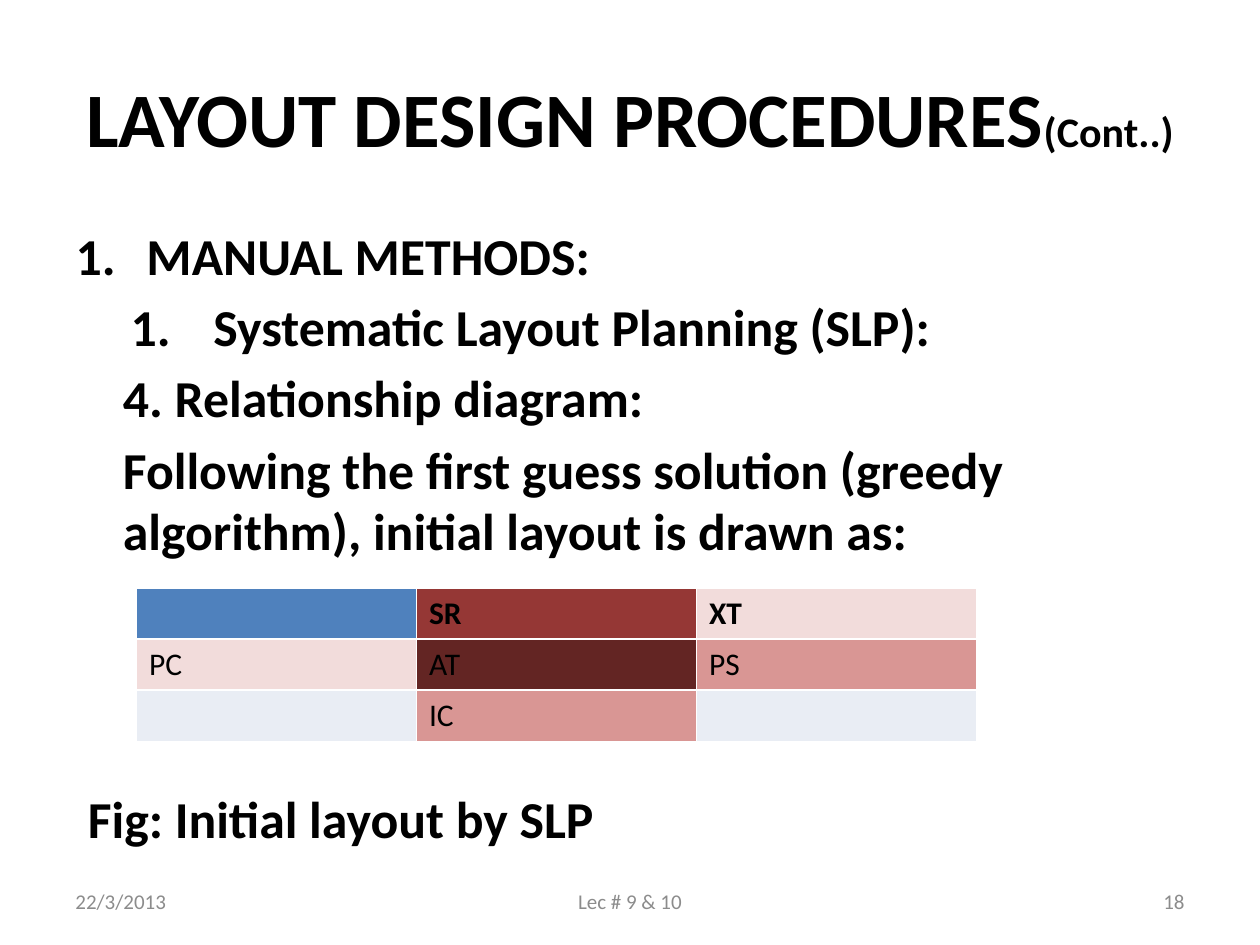
from lxml import etree
from pptx import Presentation
from pptx.dml.color import RGBColor
from pptx.enum.text import MSO_ANCHOR, MSO_AUTO_SIZE, PP_ALIGN
from pptx.oxml.ns import qn
from pptx.util import Pt

LEFT, MID, RIGHT = PP_ALIGN.LEFT, PP_ALIGN.CENTER, PP_ALIGN.RIGHT
CENTRE = MSO_ANCHOR.MIDDLE
FIXED = MSO_AUTO_SIZE.NONE

BLACK = RGBColor(0x00, 0x00, 0x00)
GREY = RGBColor(0x8C, 0x8C, 0x8C)
BLUE = RGBColor(0x4F, 0x81, 0xBD)
PALE = RGBColor(0xE9, 0xED, 0xF4)
BLUSH = RGBColor(0xF2, 0xDC, 0xDB)
ROSE = RGBColor(0xD9, 0x96, 0x94)
RED = RGBColor(0x95, 0x37, 0x35)
WINE = RGBColor(0x63, 0x25, 0x23)


def write(para, text, size=18, bold=False, color=BLACK, align=LEFT, font="Calibri"):
    para.alignment = align
    run = para.add_run()
    run.text = text
    run.font.name = font
    run.font.size = Pt(size)
    run.font.bold = bold
    run.font.color.rgb = color


def indent(para, left, hang, number):
    props = para._p.get_or_add_pPr()
    props.set("marL", str(Pt(left)))
    props.set("indent", str(Pt(-hang)))
    if number:
        mark = etree.SubElement(props, qn("a:buAutoNum"))
        mark.set("type", "arabicPeriod")
    else:
        etree.SubElement(props, qn("a:buNone"))


class Deck:
    size = 29.6
    gap = 5.9
    lead = 0.98

    def __init__(self):
        self.file = Presentation()
        self.file.slide_width = Pt(720)
        self.file.slide_height = Pt(540)
        self.slide = self.file.slides.add_slide(self.file.slide_layouts[1])

    def place(self, shape, x, y, w, h):
        shape.left, shape.top = Pt(x), Pt(y)
        shape.width, shape.height = Pt(w), Pt(h)
        frame = shape.text_frame
        frame.word_wrap = True
        frame.auto_size = FIXED
        return frame

    def title(self, parts, *box):
        frame = self.place(self.slide.shapes.title, *box)
        frame.vertical_anchor = CENTRE
        for text, size in parts:
            write(frame.paragraphs[0], text, size=size, bold=True, align=MID)

    def body(self, items, *box):
        frame = self.place(self.slide.placeholders[1], *box)
        for i, (text, level, left, hang, number, above) in enumerate(items):
            para = frame.add_paragraph() if i else frame.paragraphs[0]
            para.level = level
            para.line_spacing = self.lead
            para.space_before = Pt(above)
            indent(para, left, hang, number)
            write(para, text, size=self.size, bold=True)

    def table(self, rows, x, y, w, h):
        shape = self.slide.shapes.add_table(
            len(rows), len(rows[0]), Pt(x), Pt(y), Pt(w), Pt(h))
        for r, row in enumerate(rows):
            for c, (text, fill) in enumerate(row):
                cell = shape.table.cell(r, c)
                cell.fill.solid()
                cell.fill.fore_color.rgb = fill
                if text:
                    write(cell.text_frame.paragraphs[0], text, bold=r == 0)

    def foot(self, text, x, w, align):
        shape = self.slide.shapes.add_textbox(0, 0, 0, 0)
        frame = self.place(shape, x, 500.5, w, 28.75)
        frame.vertical_anchor = CENTRE
        write(frame.paragraphs[0], text, size=12, color=GREY, align=align)


def main():
    deck = Deck()
    deck.title([("LAYOUT DESIGN PROCEDURES", 44), ("(Cont..)", 24)],
               36, 21.6, 648, 90)
    gap = deck.gap
    deck.body([
        ("MANUAL METHODS:", 0, 40.5, 40.5, True, gap),
        (" Systematic Layout Planning (SLP):", 1, 72, 40.5, True, gap),
        ("4. Relationship diagram:", 0, 27, 0, False, gap),
        ("Following the first guess solution (greedy algorithm), "
         "initial layout is drawn as:", 0, 27, 0, False, gap),
        ("Fig: Initial layout by SLP", 0, 7, 0, False, 130),
    ], 36, 126, 648, 356.4)
    deck.table([
        [("", BLUE), ("SR", RED), ("XT", BLUSH)],
        [("PC", BLUSH), ("AT", WINE), ("PS", ROSE)],
        [("", PALE), ("IC", ROSE), ("", PALE)],
    ], 78, 336, 480, 87.6)
    deck.foot("22/3/2013", 36, 168, LEFT)
    deck.foot("Lec # 9 & 10", 246, 228, MID)
    deck.foot("18", 516, 168, RIGHT)
    deck.file.save("out.pptx")


if __name__ == "__main__":
    main()
